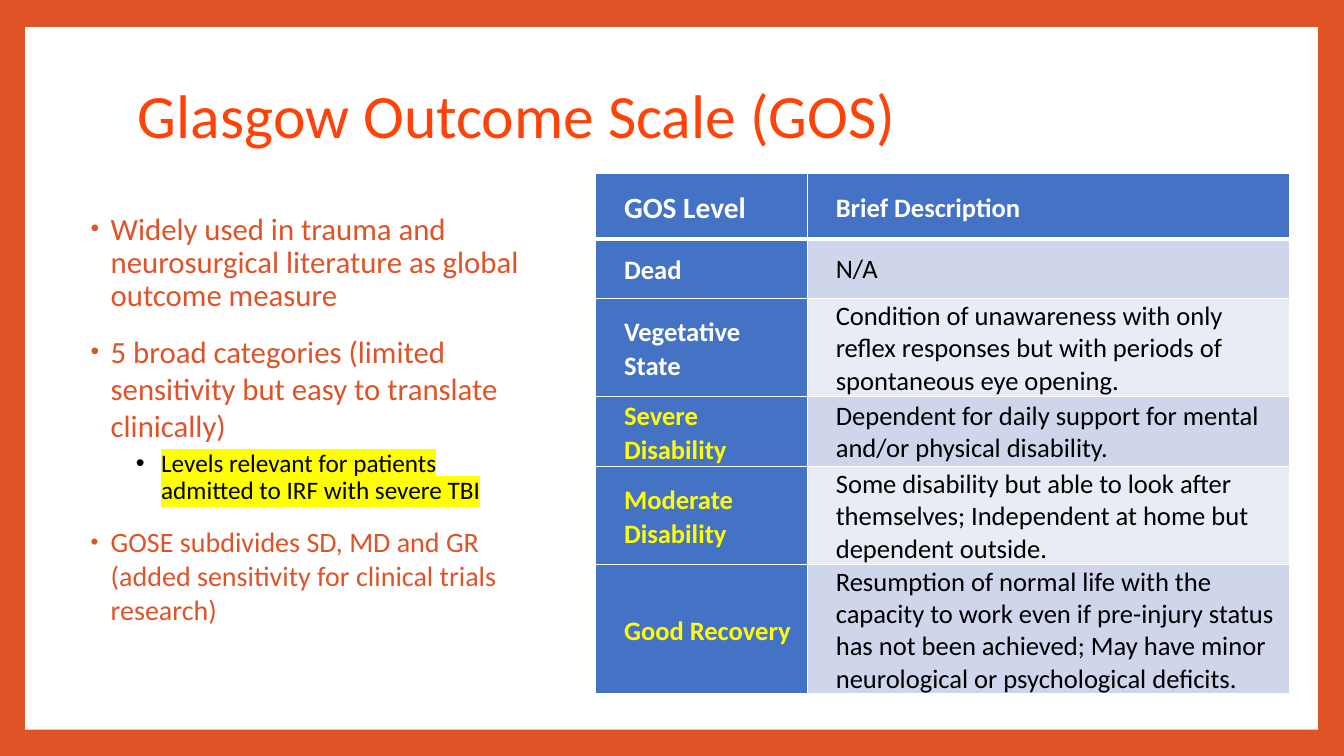
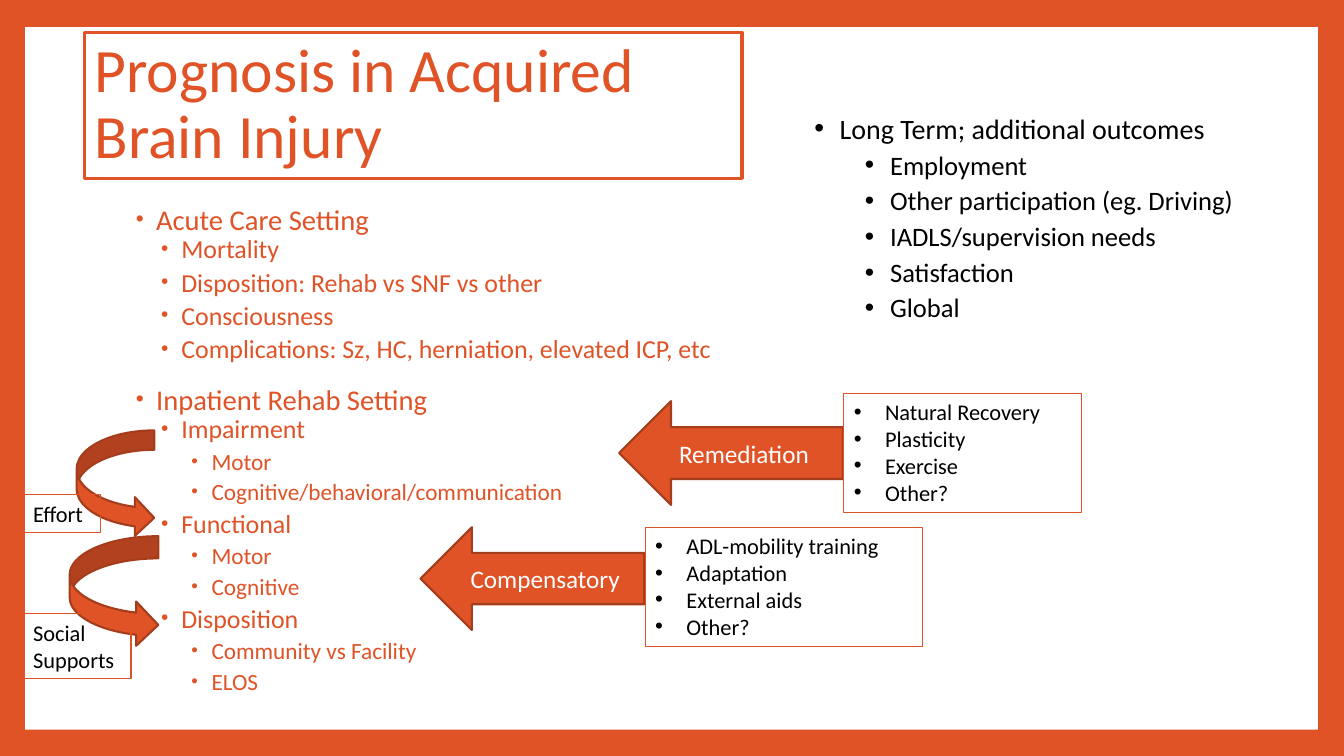
from dataclasses import dataclass, replace

from lxml import etree
from pptx import Presentation
from pptx.dml.color import RGBColor
from pptx.enum.shapes import MSO_SHAPE
from pptx.enum.text import MSO_ANCHOR, PP_ALIGN
from pptx.oxml.ns import qn
from pptx.util import Inches, Pt

RECTANGLE = MSO_SHAPE.RECTANGLE
LEFT_ARROW = MSO_SHAPE.LEFT_ARROW
CURVED_ARROW = MSO_SHAPE.CURVED_RIGHT_ARROW
MIDDLE, TOP = MSO_ANCHOR.MIDDLE, MSO_ANCHOR.TOP
CENTER, LEFT = PP_ALIGN.CENTER, PP_ALIGN.LEFT
BLANK_LAYOUT = 6


@dataclass(frozen=True)
class Theme:
    font: str = "Calibri"
    accent: str = "DF5327"
    accent_dark: str = "A53D1D"
    bright: str = "FF4207"
    white: str = "FFFFFF"
    black: str = "000000"
    yellow: str = "FFFF00"
    table_blue: str = "4472C4"
    table_bands: tuple = ("CFD5EA", "E9EBF5")
    title_size: float = 44
    header_size: float = 21
    cell_size: float = 19
    arrow_size: float = 18
    label_size: float = 16


THEME = Theme()


@dataclass(frozen=True)
class Style:
    """Paragraph look: lengths in inches, sizes and gaps in points."""
    size: float
    color: str = THEME.black
    bold: bool = False
    highlight: str = ""
    level: int = 0
    indent: float = 0
    hang: float = 0
    spacing: float = 1.0
    before: float = 0
    after: float = 0
    align: PP_ALIGN = LEFT
    small_bullet: bool = False


TITLE = Style(THEME.title_size, THEME.accent, spacing=0.9)
LABEL = Style(THEME.label_size)
LABEL_LIST = replace(LABEL, indent=0.31, hang=0.31)
ARROW_TEXT = Style(THEME.arrow_size, THEME.white, align=CENTER)

POINT = Style(22, THEME.accent, indent=0.25, hang=0.2, before=14, small_bullet=True)
MARKED = Style(18, highlight=THEME.yellow, level=1, indent=0.75, hang=0.25,
               spacing=0.9, before=5)

SETTING = replace(POINT, size=20.4, spacing=0.8)
OUTCOME = replace(SETTING, size=18.5, level=1, indent=0.5, before=2, after=4)
DETAIL = replace(OUTCOME, size=16.6, level=2, indent=0.8)

LONG_TERM = Style(20, indent=0.25, hang=0.25, spacing=0.9, before=10)
LONG_TERM_ITEM = replace(LONG_TERM, size=19, level=1, indent=0.75, before=5)

CELL_LABEL = Style(THEME.cell_size, THEME.white, bold=True, indent=0.2, spacing=1.07)
CELL_TEXT = Style(THEME.cell_size, indent=0.2)

GOS_POINTS = [
    (replace(POINT, spacing=0.9),
     "Widely used in trauma and neurosurgical literature as global outcome measure"),
    (POINT, "5 broad categories (limited sensitivity but easy to translate clinically)"),
    (MARKED, "Levels relevant for patients admitted to IRF with severe TBI"),
    (replace(POINT, size=20),
     "GOSE subdivides SD, MD and GR (added sensitivity for clinical trials research)"),
]

GOS_COLUMNS = [2.1, 4.78]
GOS_HEADER = ("GOS Level", "Brief Description")
GOS_HEADER_HEIGHT = 0.65
GOS_ROWS = [  # row height, label colour, level, description
    (0.59, THEME.white, "Dead", "N/A"),
    (0.92, THEME.white, "Vegetative State",
     "Condition of unawareness with only reflex responses but with periods of "
     "spontaneous eye opening."),
    (0.65, THEME.yellow, "Severe Disability",
     "Dependent for daily support for mental and/or physical disability."),
    (0.92, THEME.yellow, "Moderate Disability",
     "Some disability but able to look after themselves; Independent at home but "
     "dependent outside."),
    (1.22, THEME.yellow, "Good Recovery",
     "Resumption of normal life with the capacity to work even if pre-injury status "
     "has not been achieved; May have minor neurological or psychological deficits."),
]

PROGNOSIS_OUTLINE = [
    (SETTING, "Acute Care Setting"),
    (OUTCOME, "Mortality"),
    (OUTCOME, "Disposition: Rehab vs SNF vs other"),
    (OUTCOME, "Consciousness"),
    (OUTCOME, "Complications: Sz, HC, herniation, elevated ICP, etc"),
    (SETTING, "Inpatient Rehab Setting"),
    (OUTCOME, "Impairment"),
    (DETAIL, "Motor"),
    (DETAIL, "Cognitive/behavioral/communication"),
    (OUTCOME, "Functional"),
    (DETAIL, "Motor"),
    (DETAIL, "Cognitive"),
    (OUTCOME, "Disposition"),
    (DETAIL, "Community vs Facility"),
    (DETAIL, "ELOS"),
]

LONG_TERM_OUTLINE = [(LONG_TERM, "Long Term; additional outcomes")] + [
    (LONG_TERM_ITEM, text) for text in (
        "Employment", "Other participation (eg. Driving)", "IADLS/supervision needs",
        "Satisfaction", "Global")
]

APPROACHES = [  # arrow text and place, list place, list items
    ("Remediation", (6.14, 3.98, 2.22, 1.03), (8.37, 3.9, 2.36, 1.18),
     ("Natural Recovery", "Plasticity", "Exercise", "Other?")),
    ("Compensatory", (4.17, 5.23, 2.22, 1.02), (6.4, 5.23, 2.75, 1.18),
     ("ADL-mobility training", "Adaptation", "External aids", "Other?")),
]

CURVED_ARROWS = [(0.76, 4.27, 0.77, 1.06), (0.69, 5.32, 0.88, 1.1)]
INFLUENCES = [
    ("Social Supports", (0.23, 6.09, 1.07, 0.64)),
    ("Effort", (0.23, 4.91, 0.77, 0.37)),
]


def rgb(color):
    return RGBColor.from_string(color)


def inches(place):
    return [Inches(length) for length in place]


def add_color(parent, tag, color):
    holder = etree.SubElement(parent, qn(tag))
    etree.SubElement(holder, qn("a:srgbClr"), val=color)
    return holder


def add_bullet(para, style):
    props = para._p.get_or_add_pPr()
    if style.small_bullet:
        add_color(props, "a:buClr", THEME.accent)
        etree.SubElement(props, qn("a:buSzPct"), val="80000")
    etree.SubElement(props, qn("a:buFont"), typeface="Arial")
    etree.SubElement(props, qn("a:buChar"), char="•")


def write_para(para, style, text):
    para.level = style.level
    para.alignment = style.align
    para.line_spacing = style.spacing
    para.space_before = Pt(style.before)
    para.space_after = Pt(style.after)
    props = para._p.get_or_add_pPr()
    props.set("marL", str(Inches(style.indent)))
    props.set("indent", str(-Inches(style.hang)))
    if style.hang:
        add_bullet(para, style)
    span = para.add_run()
    span.text = text
    span.font.name = THEME.font
    span.font.size = Pt(style.size)
    span.font.bold = style.bold
    span.font.color.rgb = rgb(style.color)
    if style.highlight:
        run_props = span._r.get_or_add_rPr()
        mark = add_color(run_props, "a:highlight", style.highlight)
        run_props.find(qn("a:solidFill")).addnext(mark)


def write_frame(frame, lines, anchor=TOP):
    frame.word_wrap = True
    frame.vertical_anchor = anchor
    for index, (style, text) in enumerate(lines):
        para = frame.add_paragraph() if index else frame.paragraphs[0]
        write_para(para, style, text)


def add_text(page, place, lines, anchor=TOP):
    box = page.shapes.add_textbox(*inches(place))
    write_frame(box.text_frame, lines, anchor)
    return box


def outline(box, color, width):
    box.line.color.rgb = rgb(color)
    box.line.width = Pt(width)


def add_framed_text(page, place, lines, width=0.75, anchor=TOP):
    outline(add_text(page, place, lines, anchor), THEME.accent, width)


def add_filled(page, kind, place, fill):
    shape = page.shapes.add_shape(kind, *inches(place))
    shape.shadow.inherit = False
    shape.fill.solid()
    shape.fill.fore_color.rgb = rgb(fill)
    shape.line.fill.background()
    return shape


def add_arrow(page, kind, place, text=""):
    arrow = add_filled(page, kind, place, THEME.accent)
    outline(arrow, THEME.accent_dark, 1.5)
    if text:
        write_frame(arrow.text_frame, [(ARROW_TEXT, text)], MIDDLE)


def add_page(deck):
    """Add a page with the coloured border and white panel."""
    page = deck.slides.add_slide(deck.slide_layouts[BLANK_LAYOUT])
    page.background.fill.solid()
    page.background.fill.fore_color.rgb = rgb(THEME.accent)
    add_filled(page, RECTANGLE, (0.25, 0.27, 12.82, 6.97), THEME.white)
    return page


def set_borders(cell, top, bottom):
    props = cell._tc.get_or_add_tcPr()
    widths = {"a:lnL": 1, "a:lnR": 1, "a:lnT": top, "a:lnB": bottom}
    for index, (tag, width) in enumerate(widths.items()):
        line = etree.Element(qn(tag), w=str(Pt(width)))
        add_color(line, "a:solidFill", THEME.white)
        props.insert(index, line)


def fill_cell(cell, style, text, fill, top=1, bottom=1):
    cell.margin_left = cell.margin_right = Inches(0.08)
    cell.margin_top, cell.margin_bottom = Inches(0.02), 0
    cell.vertical_anchor = MIDDLE
    write_para(cell.text_frame.paragraphs[0], style, text)
    cell.fill.solid()
    cell.fill.fore_color.rgb = rgb(fill)
    set_borders(cell, top, bottom)


def add_gos_table(page):
    heights = [GOS_HEADER_HEIGHT] + [row[0] for row in GOS_ROWS]
    place = (5.91, 1.72, sum(GOS_COLUMNS), sum(heights))
    table = page.shapes.add_table(len(heights), len(GOS_COLUMNS), *inches(place)).table
    for column, width in zip(table.columns, GOS_COLUMNS):
        column.width = Inches(width)
    for row, height in zip(table.rows, heights):
        row.height = Inches(height)
    header_styles = (replace(CELL_LABEL, size=THEME.header_size), CELL_LABEL)
    for column, (style, text) in enumerate(zip(header_styles, GOS_HEADER)):
        fill_cell(table.cell(0, column), style, text, THEME.table_blue, bottom=3)
    for index, (_, color, level, description) in enumerate(GOS_ROWS):
        top = 1 if index else 3
        label, detail = table.cell(index + 1, 0), table.cell(index + 1, 1)
        fill_cell(label, replace(CELL_LABEL, color=color), level, THEME.table_blue, top)
        fill_cell(detail, CELL_TEXT, description, THEME.table_bands[index % 2], top)


def build_gos_page(deck):
    page = add_page(deck)
    title = replace(TITLE, color=THEME.bright)
    add_text(page, (1.27, 0.44, 10.8, 1.48), [(title, "Glasgow Outcome Scale (GOS)")], MIDDLE)
    add_text(page, (0.75, 2.07, 4.63, 4.83), GOS_POINTS)
    add_gos_table(page)


def build_prognosis_page(deck):
    page = add_page(deck)
    add_framed_text(page, (0.84, 0.32, 6.52, 1.45),
                    [(TITLE, "Prognosis in Acquired Brain Injury")], 2.25, MIDDLE)
    add_text(page, (1.2, 2.02, 6.91, 5.14), PROGNOSIS_OUTLINE)
    for name, arrow_place, list_place, items in APPROACHES:
        add_arrow(page, LEFT_ARROW, arrow_place, name)
        add_framed_text(page, list_place, [(LABEL_LIST, item) for item in items])
    add_text(page, (7.98, 1.09, 5.23, 2.19), LONG_TERM_OUTLINE)
    for place in CURVED_ARROWS:
        add_arrow(page, CURVED_ARROW, place)
    for name, place in INFLUENCES:
        add_framed_text(page, place, [(LABEL, name)])


def main():
    deck = Presentation()
    deck.slide_width, deck.slide_height = Inches(13.33), Inches(7.5)
    build_gos_page(deck)
    build_prognosis_page(deck)
    deck.save("out.pptx")


if __name__ == "__main__":
    main()
